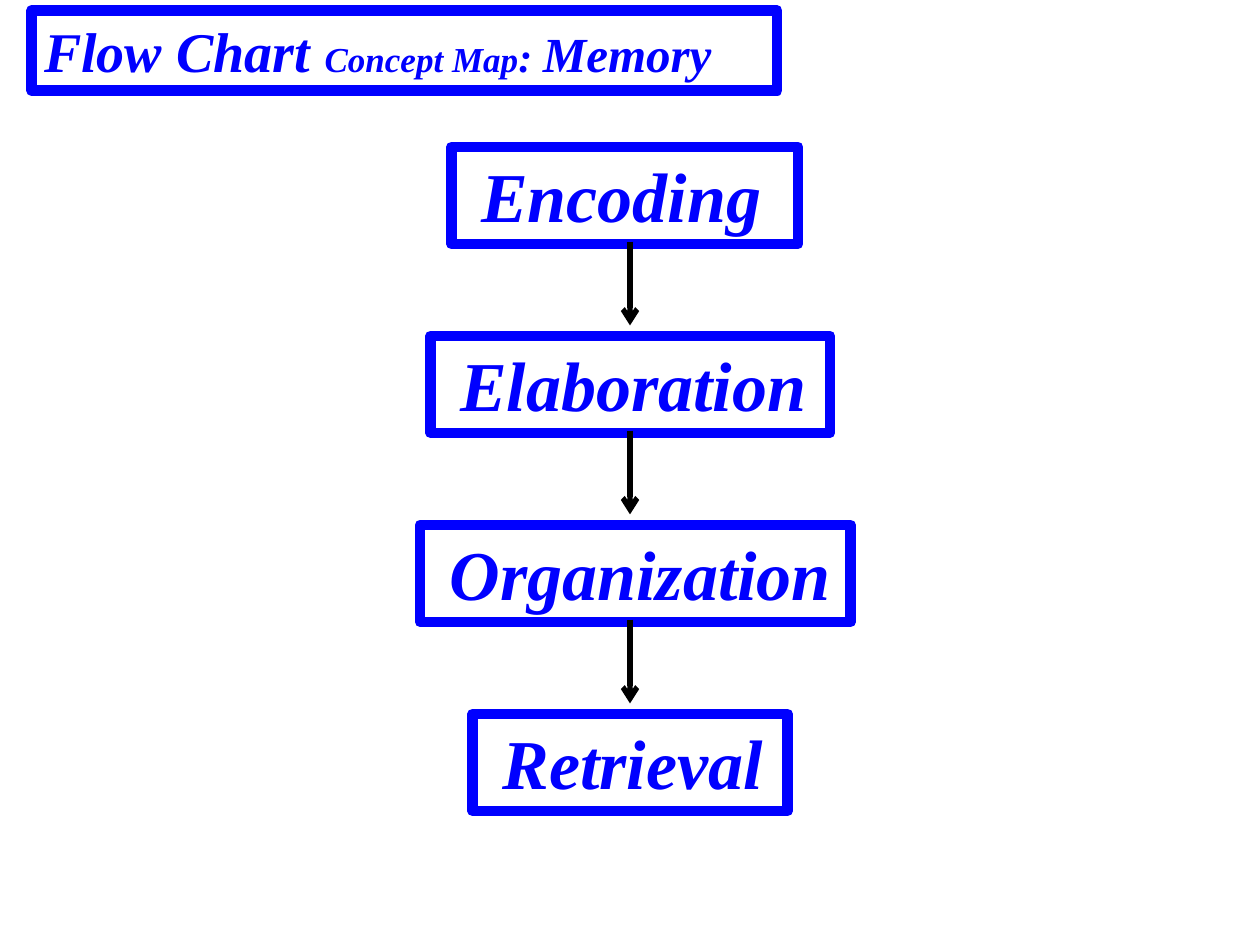
from lxml import etree
from pptx import Presentation
from pptx import util as u
from pptx.dml.color import RGBColor
from pptx.enum import shapes, text
from pptx.oxml.ns import qn

BLUE = RGBColor(0x00, 0x00, 0xFF)
BLACK = RGBColor(0x00, 0x00, 0x00)
FONT = "Times New Roman"

TITLE = [("Flow Chart ", 32), ("Concept Map", 20), (": ", 24), ("Memory", 28)]
# Step name, left edge and width in cm
STEPS = [
    (" Encoding", 9.1, 6.99),
    (" Elaboration", 8.68, 8.05),
    (" Organization", 8.47, 8.68),
    (" Retrieval", 9.53, 6.35),
]
STEP_SIZE = 40
FIRST_TOP, STEP_PITCH, STEP_HEIGHT = 2.96, 3.81, 1.96
ARROW_X, ARROW_START, ARROW_LENGTH = 12.7, 1.91, 1.69


def add_framed_text(slide, spans, *, left, top, width, height,
                    color=BLUE, border=6):
    """Add a bordered text box; spans are (wording, point size) pairs."""
    box = slide.shapes.add_textbox(u.Cm(left), u.Cm(top), u.Cm(width), u.Cm(height))
    box.line.color.rgb = color
    box.line.width = u.Pt(border)
    frame = box.text_frame
    frame.word_wrap = True
    frame.auto_size = text.MSO_AUTO_SIZE.SHAPE_TO_FIT_TEXT
    para = frame.paragraphs[0]
    for wording, size in spans:
        span = para.add_run()
        span.text = wording
        span.font.name = FONT
        span.font.size = u.Pt(size)
        span.font.bold = span.font.italic = True
        span.font.color.rgb = color


def add_down_arrow(slide, x, top, length):
    arrow = slide.shapes.add_connector(
        shapes.MSO_CONNECTOR.STRAIGHT,
        u.Cm(x), u.Cm(top), u.Cm(x), u.Cm(top + length))
    arrow.line.color.rgb = BLACK
    arrow.line.width = u.Pt(3)
    etree.SubElement(arrow.line._get_or_add_ln(), qn("a:tailEnd"), type="arrow")
    etree.SubElement(arrow._element.spPr, qn("a:effectLst"))


def main():
    deck = Presentation()
    deck.slide_width, deck.slide_height = u.Cm(25.4), u.Cm(19.05)
    page = deck.slides.add_slide(deck.slide_layouts[6])

    add_framed_text(page, TITLE, left=0.64, top=0.21, width=15.03, height=1.62)
    for index, (name, left, width) in enumerate(STEPS):
        top = FIRST_TOP + index * STEP_PITCH
        add_framed_text(page, [(name, STEP_SIZE)], left=left, top=top,
                        width=width, height=STEP_HEIGHT)
        if index < len(STEPS) - 1:
            add_down_arrow(page, ARROW_X, top + ARROW_START, ARROW_LENGTH)

    deck.save("out.pptx")


if __name__ == "__main__":
    main()
